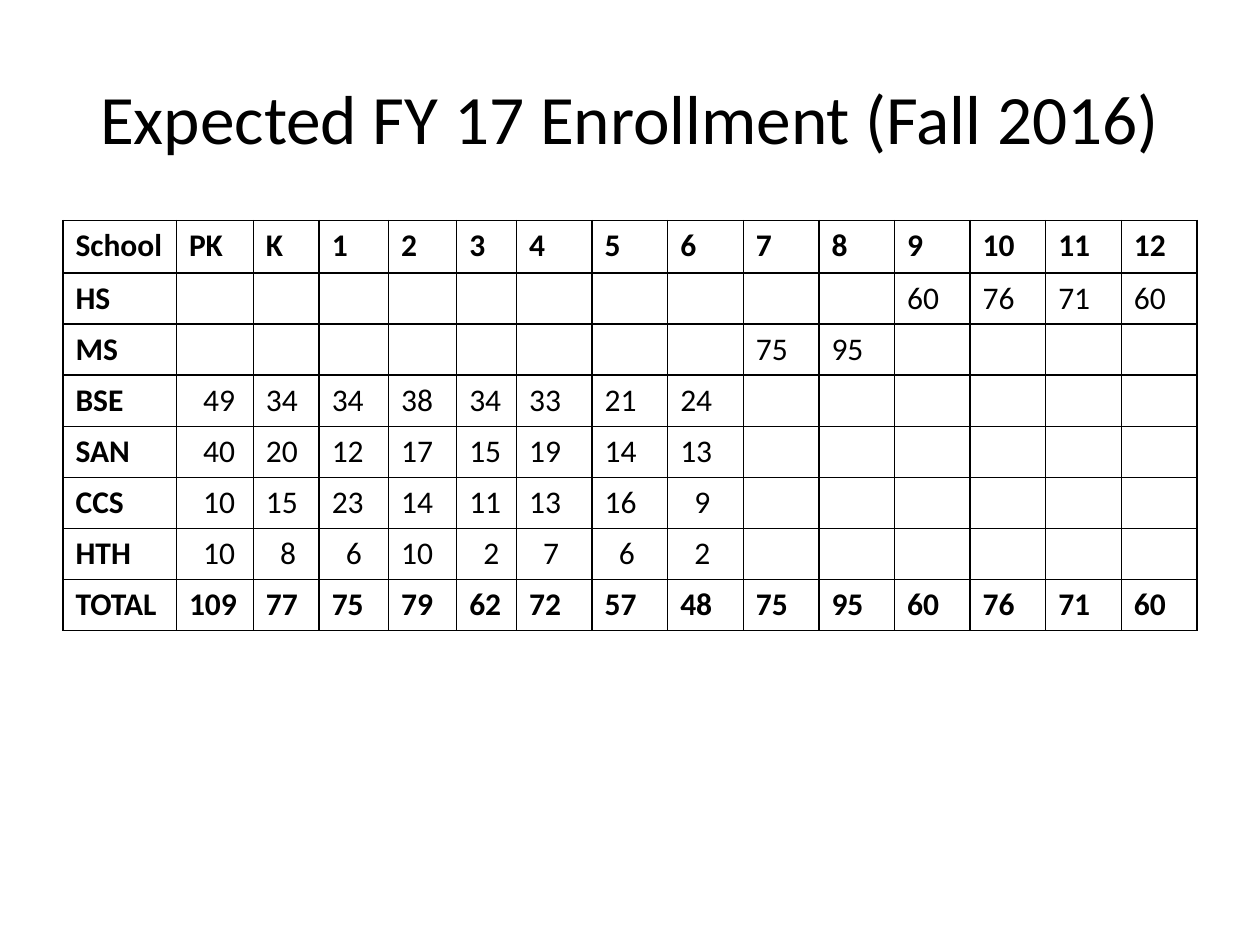
from lxml.etree import SubElement
from pptx import Presentation
from pptx.dml.color import RGBColor
from pptx.enum.text import MSO_ANCHOR, PP_ALIGN
from pptx.oxml.ns import qn
from pptx.util import Pt

BLACK = RGBColor(0, 0, 0)
FONT = "Calibri"
TITLE = "Expected FY 17 Enrollment (Fall 2016)"
GRADES = ["PK", "K"] + [str(grade) for grade in range(1, 13)]
ENROLLMENT = {
    "HS": {"9": 60, "10": 76, "11": 71, "12": 60},
    "MS": {"7": 75, "8": 95},
    "BSE": dict(zip(GRADES, [49, 34, 34, 38, 34, 33, 21, 24])),
    "SAN": dict(zip(GRADES, [40, 20, 12, 17, 15, 19, 14, 13])),
    "CCS": dict(zip(GRADES, [10, 15, 23, 14, 11, 13, 16, 9])),
    "HTH": dict(zip(GRADES, [10, 8, 6, 10, 2, 7, 6, 2])),
}
COLUMN_WIDTHS = [64.8, 44, 37.6, 39.6, 39, 34.2] + [43.2] * 9
ROW_HEIGHTS = [30] + [29.2] * 7
LEFT, TABLE_TOP = 36, 126
CELL_MARGIN, NUMBER_INDENT = 7.2, 8.1


def write(para, text, size, bold=False):
    span = para.add_run()
    span.text = text
    values = {"name": FONT, "size": Pt(size), "bold": bold}
    for name, value in values.items():
        setattr(span.font, name, value)
    span.font.color.rgb = BLACK


def add_borders(cell):
    properties = cell._tc.get_or_add_tcPr()
    for side in ("lnL", "lnR", "lnT", "lnB"):
        line = SubElement(properties, qn(f"a:{side}"), w=str(Pt(1)))
        fill = SubElement(line, qn("a:solidFill"))
        SubElement(fill, qn("a:srgbClr"), val=str(BLACK))


def table_rows():
    rows = [["School"] + GRADES]
    for school, counts in ENROLLMENT.items():
        rows.append([school] + [counts.get(grade, "") for grade in GRADES])
    totals = [sum(counts.get(grade, 0) for counts in ENROLLMENT.values())
              for grade in GRADES]
    return rows + [["TOTAL"] + totals]


def add_title(page):
    box = page.shapes.add_textbox(Pt(LEFT), Pt(21.6), Pt(648), Pt(90))
    frame = box.text_frame
    frame.word_wrap = True
    frame.vertical_anchor = MSO_ANCHOR.MIDDLE
    para = frame.paragraphs[0]
    para.alignment = PP_ALIGN.CENTER
    write(para, TITLE, 39.6)


def add_enrollment_table(page):
    rows = table_rows()
    table = page.shapes.add_table(
        len(rows), len(rows[0]), Pt(LEFT), Pt(TABLE_TOP),
        Pt(sum(COLUMN_WIDTHS)), Pt(sum(ROW_HEIGHTS))).table
    table.first_row = table.horz_banding = False
    for column, width in zip(table.columns, COLUMN_WIDTHS):
        column.width = Pt(width)
    for row, height in zip(table.rows, ROW_HEIGHTS):
        row.height = Pt(height)
    for row_index, row in enumerate(rows):
        for column_index, value in enumerate(row):
            cell = table.cell(row_index, column_index)
            add_borders(cell)
            cell.fill.background()
            bold = row_index in (0, len(rows) - 1) or column_index == 0
            if value == "":
                continue
            indented = not bold and (column_index == 1 or value < 10)
            cell.margin_left = Pt(CELL_MARGIN + NUMBER_INDENT * indented)
            cell.margin_right = Pt(0 if indented else CELL_MARGIN)
            write(cell.text_frame.paragraphs[0], str(value), 18, bold)


def main():
    deck = Presentation()
    deck.slide_width, deck.slide_height = Pt(720), Pt(540)
    page = deck.slides.add_slide(deck.slide_layouts[6])
    add_title(page)
    add_enrollment_table(page)
    deck.save("out.pptx")


if __name__ == "__main__":
    main()
